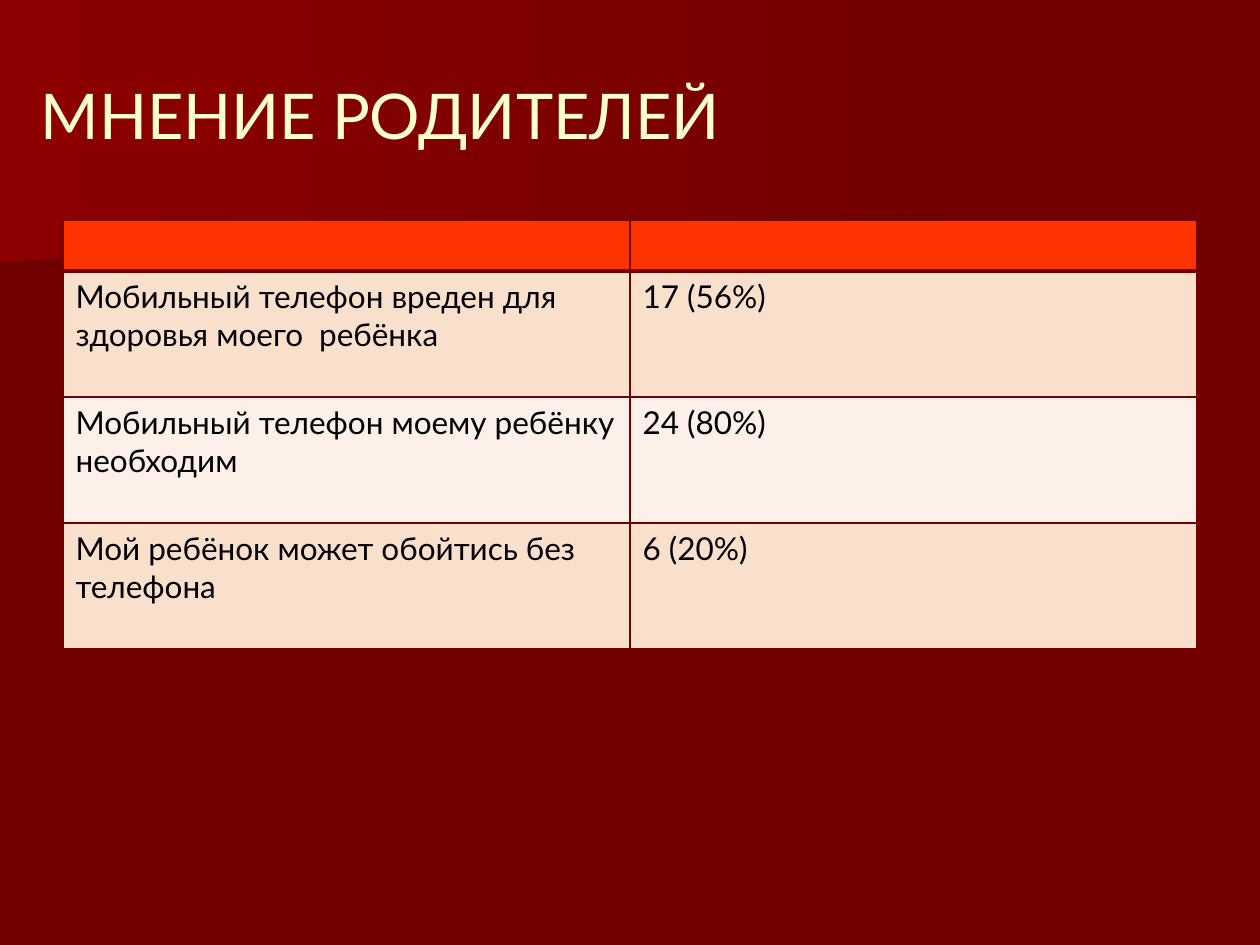
from dataclasses import dataclass

from lxml.etree import SubElement
from pptx import Presentation
from pptx.dml.color import RGBColor
from pptx.enum.text import MSO_ANCHOR, PP_ALIGN
from pptx.oxml.ns import qn
from pptx.util import Pt


@dataclass(frozen=True)
class Theme:
    font: str = "Lato"
    title_size: int = 36
    body_size: int = 18
    background: str = "720000"
    glow: str = "8C0000"
    shade: str = "6F0000"
    title: str = "FFFFCC"
    text: str = "000000"
    header: str = "FF3300"
    bands: tuple = ("F9E0CD", "FCF0E8")
    border: str = "720000"


THEME = Theme()

ROWS = [
    ("", ""),
    ("Мобильный телефон вреден для здоровья моего  ребёнка", "17 (56%)"),
    ("Мобильный телефон моему ребёнку необходим", "24 (80%)"),
    ("Мой ребёнок может обойтись без телефона", "6 (20%)"),
]


def rgb(value):
    return RGBColor.from_string(value)


def style_text(frame, size, color):
    for para in frame.paragraphs:
        para.alignment = PP_ALIGN.LEFT
        for font in [para.font] + [span.font for span in para.runs]:
            font.name = THEME.font
            font.size = Pt(size)
            font.color.rgb = rgb(color)


def add_beam(page, points, start_color):
    """Draw a backdrop polygon that fades to the background colour."""
    builder = page.shapes.build_freeform(Pt(points[0][0]), Pt(points[0][1]))
    builder.add_line_segments([(Pt(x), Pt(y)) for x, y in points[1:]])
    beam = builder.convert_to_shape()
    beam.shadow.inherit = False
    beam.line.fill.background()
    beam.fill.gradient()
    beam.fill.gradient_angle = 0
    stops = beam.fill.gradient_stops
    for stop, position, color in zip(stops, (0, 1), (start_color, THEME.background)):
        stop.position = position
        stop.color.rgb = rgb(color)
    return beam


def add_backdrop(page, left, top, width, height):
    page.background.fill.solid()
    page.background.fill.fore_color.rgb = rgb(THEME.background)
    right, bottom = left + width, top + height
    shade = [(right - 10, 110), (left, bottom), (left, 72.7), (right - 10, 72.7)]
    glow = [(right, 116.6), (left, bottom - 6.5), (left, top), (right, top)]
    beams = [add_beam(page, shade, THEME.shade), add_beam(page, glow, THEME.glow)]
    # Keep the beams behind the title
    tree = page.shapes.title.element.getparent()
    for index, beam in enumerate(beams, start=2):
        tree.insert(index, beam.element)


def place_title(page, text, left, top, width, height):
    title = page.shapes.title
    title.left, title.top, title.width, title.height = map(Pt, (left, top, width, height))
    frame = title.text_frame
    frame.text = text
    frame.word_wrap = True
    frame.vertical_anchor = MSO_ANCHOR.MIDDLE
    style_text(frame, THEME.title_size, THEME.title)


def set_borders(cell, widths):
    properties = cell._tc.get_or_add_tcPr()
    for side, width in widths.items():
        line = SubElement(properties, qn(f"a:ln{side}"), w=str(Pt(width)))
        fill = SubElement(line, qn("a:solidFill"))
        SubElement(fill, qn("a:srgbClr"), val=THEME.border)


def add_answers(page, rows, left, top, width, header_height, row_height):
    columns = len(rows[0])
    height = header_height + row_height * (len(rows) - 1)
    table = page.shapes.add_table(
        len(rows), columns, Pt(left), Pt(top), Pt(width), Pt(height)
    ).table
    for column in table.columns:
        column.width = Pt(width / columns)
    for index, texts in enumerate(rows):
        table.rows[index].height = Pt(row_height if index else header_height)
        color = THEME.bands[(index - 1) % 2] if index else THEME.header
        # A heavy rule separates the header from the body
        widths = {"L": 1, "R": 1, "T": 3 if index == 1 else 1, "B": 1 if index else 3}
        for cell, text in zip(table.rows[index].cells, texts):
            set_borders(cell, widths)
            cell.fill.solid()
            cell.fill.fore_color.rgb = rgb(color)
            cell.text_frame.text = text
            style_text(cell.text_frame, THEME.body_size, THEME.text)


def main():
    deck = Presentation()
    deck.slide_width, deck.slide_height = Pt(720), Pt(540)
    page = deck.slides.add_slide(deck.slide_layouts[5])
    add_backdrop(page, 0, 0, 570, 156.2)
    place_title(page, "МНЕНИЕ РОДИТЕЛЕЙ", 16, 32.5, 684, 66)
    add_answers(page, ROWS, 36, 126, 648, 28.8, 72)
    deck.save("out.pptx")


if __name__ == "__main__":
    main()
